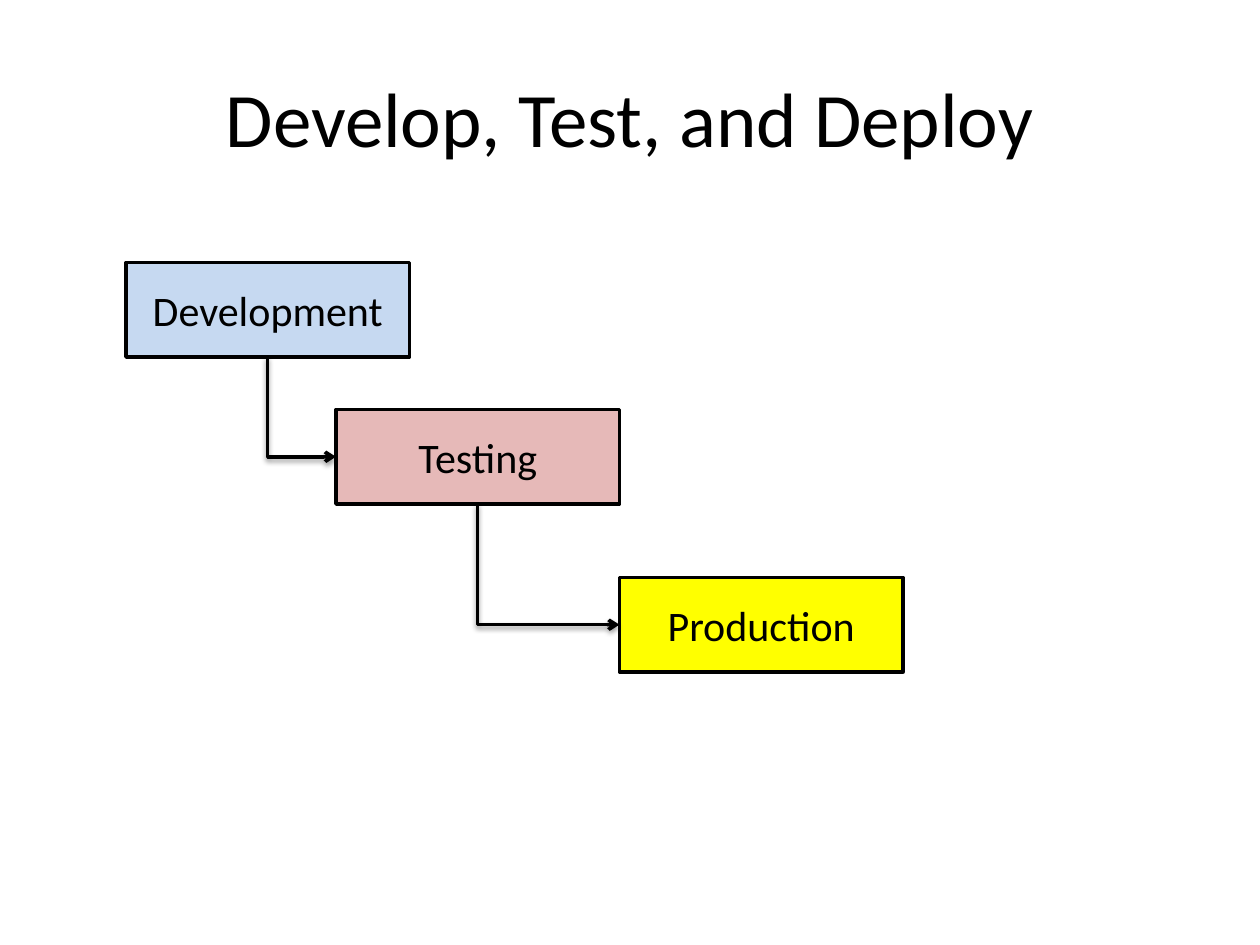
from lxml import etree
from pptx import Presentation
from pptx.dml.color import RGBColor
from pptx.enum.shapes import MSO_CONNECTOR, MSO_SHAPE
from pptx.enum.text import MSO_ANCHOR, PP_ALIGN
from pptx.oxml.ns import qn
from pptx.util import Pt

CENTER = PP_ALIGN.CENTER
MIDDLE = MSO_ANCHOR.MIDDLE
RECT = MSO_SHAPE.RECTANGLE
ELBOW = MSO_CONNECTOR.ELBOW
BLACK = "000000"
STAGE_W, STAGE_H = 162, 54
STAGES = [
    ("Development", 72, 150, "C6D9F1"),
    ("Testing", 192, 234, "E6B9B8"),
    ("Production", 354, 330, "FFFF00"),
]


def rgb(value):
    """Return the colour for a hex string."""
    return RGBColor.from_string(value)


def add_text(sp, text, size):
    """Write one centred line of text into a shape."""
    tf = sp.text_frame
    tf.word_wrap = True
    tf.vertical_anchor = MIDDLE
    p = tf.paragraphs[0]
    p.alignment = CENTER
    r = p.add_run()
    r.text = text
    r.font.name = "Calibri"
    r.font.size = Pt(size)
    r.font.color.rgb = rgb(BLACK)


def style_line(line):
    """Give a line the diagram's black stroke."""
    line.color.rgb = rgb(BLACK)
    line.width = Pt(2)


def add_title(s, text, x, y, w, h):
    """Place the slide title in its box."""
    add_text(s.shapes.add_textbox(Pt(x), Pt(y), Pt(w), Pt(h)), text, 44)


def add_stage(s, text, x, y, fill):
    """Place one stage box and return it."""
    sp = s.shapes.add_shape(RECT, Pt(x), Pt(y), Pt(STAGE_W), Pt(STAGE_H))
    sp.shadow.inherit = False
    sp.fill.solid()
    sp.fill.fore_color.rgb = rgb(fill)
    style_line(sp.line)
    add_text(sp, text, 24)
    return sp


def add_shadow(spPr):
    """Add a soft shadow falling straight down."""
    effects = etree.SubElement(spPr, qn("a:effectLst"))
    shadow = etree.SubElement(
        effects, qn("a:outerShdw"), blurRad=str(Pt(3.1)), dist=str(Pt(1.6)),
        dir="5400000", rotWithShape="0")
    color = etree.SubElement(shadow, qn("a:srgbClr"), val=BLACK)
    etree.SubElement(color, qn("a:alpha"), val="38000")


def add_step(s, start, end):
    """Join the bottom of one stage to the left side of the next."""
    x1, y1 = start.left + start.width // 2, start.top + start.height
    x2, y2 = end.left, end.top + end.height // 2
    run, drop = x2 - x1, y2 - y1
    cxn = s.shapes.add_connector(ELBOW, x1, y1, x2, y2)
    cxn.begin_connect(start, 2)
    cxn.end_connect(end, 1)
    cxn.left, cxn.top = (x1 + x2 - drop) // 2, (y1 + y2 - run) // 2
    cxn.width, cxn.height = drop, run
    style_line(cxn.line)
    spPr = cxn._element.spPr
    xfrm = spPr.find(qn("a:xfrm"))
    xfrm.set("rot", "16200000")
    xfrm.set("flipH", "1")
    spPr.find(qn("a:prstGeom")).set("prst", "bentConnector2")
    etree.SubElement(spPr.find(qn("a:ln")), qn("a:tailEnd"), type="arrow")
    add_shadow(spPr)


def main():
    """Build and save the slide."""
    prs = Presentation()
    prs.slide_width, prs.slide_height = Pt(720), Pt(540)
    s = prs.slides.add_slide(prs.slide_layouts[6])
    add_title(s, "Develop, Test, and Deploy", 36, 21.6, 648, 90)
    boxes = [add_stage(s, *stage) for stage in STAGES]
    for start, end in zip(boxes, boxes[1:]):
        add_step(s, start, end)
    prs.save("out.pptx")


if __name__ == "__main__":
    main()
